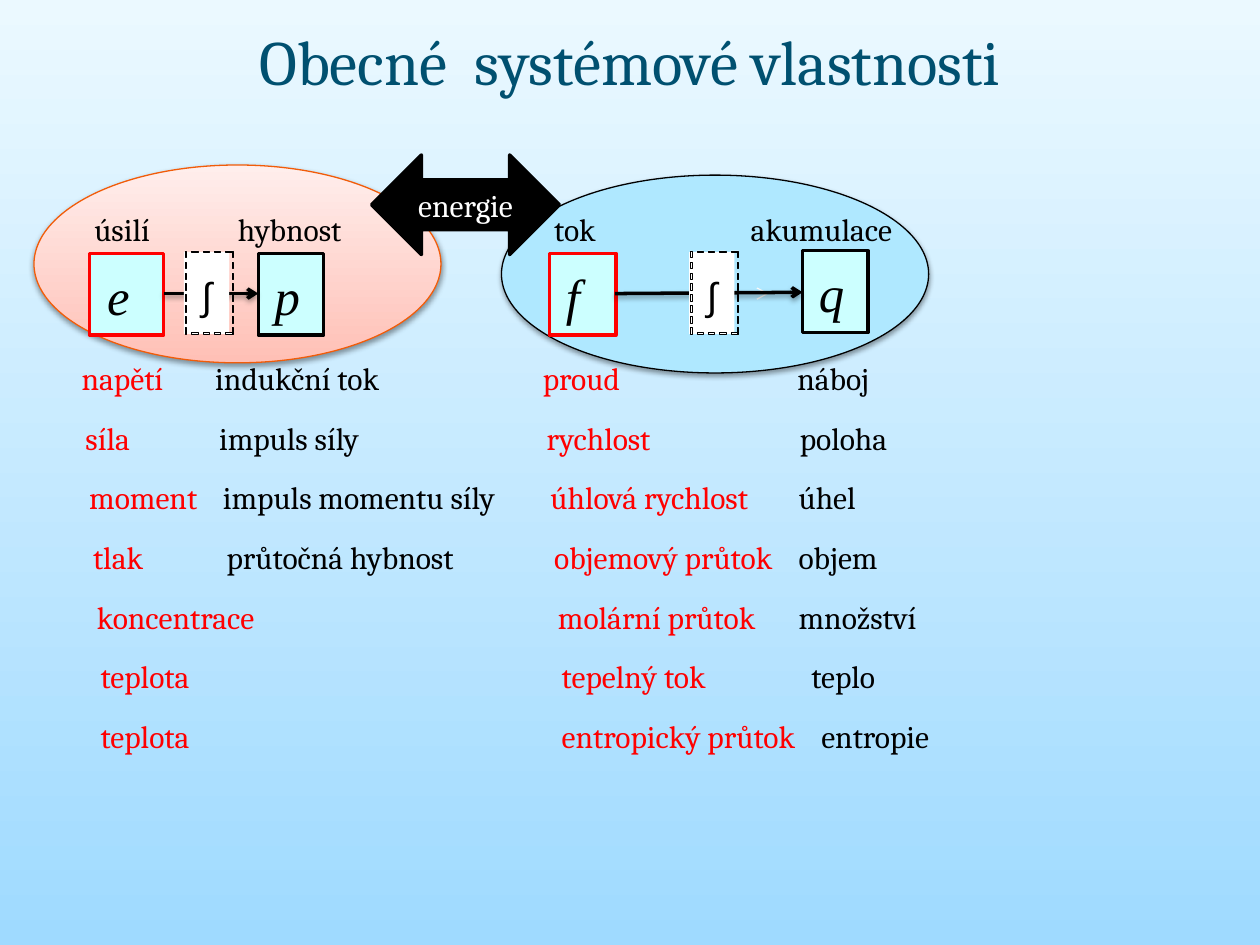
import dataclasses

import lxml.etree
import pptx
import pptx.dml.color
import pptx.enum.dml
import pptx.enum.shapes
import pptx.enum.text
import pptx.oxml.ns
import pptx.util

Inches = pptx.util.Inches
SHAPES = pptx.enum.shapes.MSO_SHAPE


@dataclasses.dataclass(frozen=True)
class Theme:
    black: str = "000000"
    white: str = "FFFFFF"
    red: str = "FF0000"
    title: str = "005070"
    blue: str = "AFE8FF"
    cyan: str = "CCFFFF"
    orange: str = "F15C09"
    pale: str = "F9F9F9"
    sky: tuple = ("EBF9FF", "9FDAFF")
    peach: tuple = ("FFC0B6", "FFEEEC")
    serif: str = "Cambria"
    symbol: str = "Times New Roman"
    sans: str = "Arial"
    title_size: int = 36
    symbol_size: int = 29
    integral_size: int = 22
    body_size: int = 18


def rgb(code):
    return pptx.dml.color.RGBColor.from_string(code)


def child(parent, tag, **attributes):
    return lxml.etree.SubElement(parent, pptx.oxml.ns.qn(tag), **attributes)


def gradient(fill, colours, angle):
    fill.gradient()
    fill.gradient_angle = angle
    for stop, colour, position in zip(fill.gradient_stops, colours, (0, 1)):
        stop.color.rgb = rgb(colour)
        stop.position = position


def drop_shadow(effects):
    shadow = child(effects, "a:outerShdw", blurRad="39370", dist="20320",
                   dir="5400000", rotWithShape="0")
    colour = child(shadow, "a:srgbClr", val=Theme.black)
    child(colour, "a:alpha", val="38000")


class Painter:
    def __init__(self, page, theme):
        self.page = page
        self.theme = theme

    def style(self, shape, fill, line, weight, shadow=False):
        """Fill with a colour or a pair of gradient colours, then outline."""
        if isinstance(fill, tuple):
            gradient(shape.fill, fill, 90)
        else:
            shape.fill.solid()
            shape.fill.fore_color.rgb = rgb(fill)
        if line:
            shape.line.color.rgb = rgb(line)
            shape.line.width = pptx.util.Pt(weight)
        else:
            shape.line.fill.background()
        shape.shadow.inherit = False
        if shadow:
            drop_shadow(shape._element.spPr.find(pptx.oxml.ns.qn("a:effectLst")))

    def shape(self, kind, place, fill, line=None, weight=0.75, shadow=False):
        shape = self.page.shapes.add_shape(kind, *map(Inches, place))
        self.style(shape, fill, line, weight, shadow)
        return shape

    def add_text(self, frame, text, colour, size, font, italic=False, centred=False):
        para = frame.paragraphs[0]
        if centred:
            frame.vertical_anchor = pptx.enum.text.MSO_ANCHOR.MIDDLE
            para.alignment = pptx.enum.text.PP_ALIGN.CENTER
        else:
            para.alignment = pptx.enum.text.PP_ALIGN.LEFT
        span = para.add_run()
        span.text = text
        span.font.size = pptx.util.Pt(size)
        span.font.name = font
        span.font.italic = italic
        span.font.color.rgb = rgb(colour)

    def label(self, text, x, y, width, colour=Theme.black):
        frame = self.page.shapes.add_textbox(
            *map(Inches, (x, y, width, 0.4))).text_frame
        frame.word_wrap = False
        frame.auto_size = pptx.enum.text.MSO_AUTO_SIZE.SHAPE_TO_FIT_TEXT
        self.add_text(frame, text, colour, self.theme.body_size, self.theme.serif)

    def symbol(self, text, place, size, font, italic=False):
        frame = self.page.shapes.add_textbox(*map(Inches, place)).text_frame
        frame.margin_left = frame.margin_right = 0
        frame.margin_top = frame.margin_bottom = 0
        frame.word_wrap = False
        self.add_text(frame, text, self.theme.black, size, font, italic)

    def variable(self, letter, x, y, width, letter_x, letter_width, line):
        self.shape(SHAPES.RECTANGLE, (x, y, width, 0.65), self.theme.cyan, line, 1.88)
        self.symbol(letter, (letter_x, y + 0.09, letter_width, 0.48),
                    self.theme.symbol_size, self.theme.symbol, italic=True)

    def arrow(self, start, end, colour, weight, shadow=False):
        arrow = self.page.shapes.add_connector(
            pptx.enum.shapes.MSO_CONNECTOR.STRAIGHT, *map(Inches, start + end))
        arrow.line.color.rgb = rgb(colour)
        arrow.line.width = pptx.util.Pt(weight)
        properties = arrow._element.spPr
        child(properties.find(pptx.oxml.ns.qn("a:ln")), "a:tailEnd", type="arrow")
        effects = child(properties, "a:effectLst")
        if shadow:
            drop_shadow(effects)

    def integrator(self, x):
        """White box with a frame of dashes around an integral sign."""
        top, width, height, dash, thick = 1.99, 0.38, 0.66, 0.05, 0.01
        self.shape(SHAPES.RECTANGLE, (x - 0.01, 2, 0.36, 0.65), self.theme.white)
        across = [(x + 0.05 + 0.09 * i, y, dash, thick)
                  for y in (top, top + height - thick) for i in range(4)]
        pitch = (height - dash) / 7
        down = [(left, top + pitch * i, thick, dash)
                for left in (x, x + width - thick) for i in range(8)]
        outline = None
        for left, upper, wide, high in across + down:
            a, b, c, d = map(Inches, (left, upper, left + wide, upper + high))
            if outline is None:
                outline = self.page.shapes.build_freeform(a, b)
            else:
                outline.move_to(a, b)
            outline.add_line_segments([(c, b), (c, d), (a, d)], close=True)
        self.style(outline.convert_to_shape(), self.theme.white, self.theme.black, 0.13)
        self.symbol("∫", (x + 0.13, 2.16, 0.08, 0.37),
                    self.theme.integral_size, self.theme.sans)


# Effort, momentum, flow and accumulation, each with its box width;
# the last number is the left edge of the accumulation.
QUANTITIES = [
    (("napětí", 0.9), ("indukční tok", 1.55), ("proud", 0.85), ("náboj", 0.82), 6.23),
    (("síla", 0.59), ("impuls síly", 1.38), ("rychlost", 1.07), ("poloha", 0.96), 6.25),
    (("moment", 1.11), ("impuls momentu síly", 2.52), ("úhlová rychlost", 1.88),
     ("úhel", 0.73), 6.24),
    (("tlak", 0.6), ("průtočná hybnost", 2.14), ("objemový průtok", 2.05),
     ("objem", 0.97), 6.24),
    (("koncentrace", 1.58), None, ("molární průtok", 1.81), ("množství", 1.27), 6.24),
    (("teplota", 0.96), None, ("tepelný tok", 1.42), ("teplo", 0.75), 6.34),
    (("teplota", 0.96), None, ("entropický průtok", 2.12), ("entropie", 1.11), 6.42),
]


def main():
    theme = Theme()
    deck = pptx.Presentation()
    deck.slide_width, deck.slide_height = Inches(10), Inches(7.5)
    page = deck.slides.add_slide(deck.slide_layouts[6])
    gradient(page.background.fill, theme.sky, 270)
    painter = Painter(page, theme)

    painter.shape(SHAPES.OVAL, (3.98, 1.39, 3.39, 1.57), theme.blue, theme.black, shadow=True)
    painter.shape(SHAPES.OVAL, (0.27, 1.31, 3.23, 1.57), theme.peach, theme.orange, shadow=True)

    painter.variable("e", 0.71, 2.01, 0.59, 0.85, 0.18, theme.red)
    painter.variable("f", 4.36, 2.01, 0.53, 4.49, 0.11, theme.red)
    painter.variable("p", 2.05, 2.01, 0.52, 2.18, 0.2, theme.black)
    painter.variable("q", 6.37, 1.99, 0.52, 6.5, 0.2, theme.black)

    for text, x, width in (("úsilí", 0.65, 0.65), ("hybnost", 1.79, 1.09),
                           ("tok", 4.3, 0.54), ("akumulace", 5.86, 1.42)):
        painter.label(text, x, 1.62, width)

    row_pitch = (5.64 - 2.8) / (len(QUANTITIES) - 1)
    for row, (effort, momentum, flow, amount, amount_x) in enumerate(QUANTITIES):
        x, y = 0.55 + min(0.03 * row, 0.15), 2.8 + row_pitch * row
        painter.label(effort[0], x, y, effort[1], theme.red)
        painter.label(flow[0], x + 3.66, y, flow[1], theme.red)
        painter.label(amount[0], amount_x, y, amount[1])
        if momentum:
            painter.label(momentum[0], x + 1.06, y, momentum[1])

    energy = painter.shape(SHAPES.LEFT_RIGHT_ARROW, (2.95, 1.23, 1.49, 0.79),
                           theme.black, theme.black, 2)
    painter.add_text(energy.text_frame, "energie", theme.white, theme.body_size,
                     theme.serif, centred=True)

    painter.arrow((5.24, 2.33), (6.1, 2.33), theme.pale, 0.75)
    painter.arrow((4.88, 2.33), (6.37, 2.32), theme.black, 2, shadow=True)
    painter.integrator(5.48)
    painter.arrow((1.3, 2.33), (2.05, 2.33), theme.black, 2, shadow=True)
    painter.integrator(1.47)

    title = page.shapes.add_textbox(*map(Inches, (0.51, -0.19, 8.98, 1.34))).text_frame
    title.word_wrap = True
    painter.add_text(title, "Obecné  systémové vlastnosti", theme.title,
                     theme.title_size, theme.serif, centred=True)
    deck.save("out.pptx")


if __name__ == "__main__":
    main()
